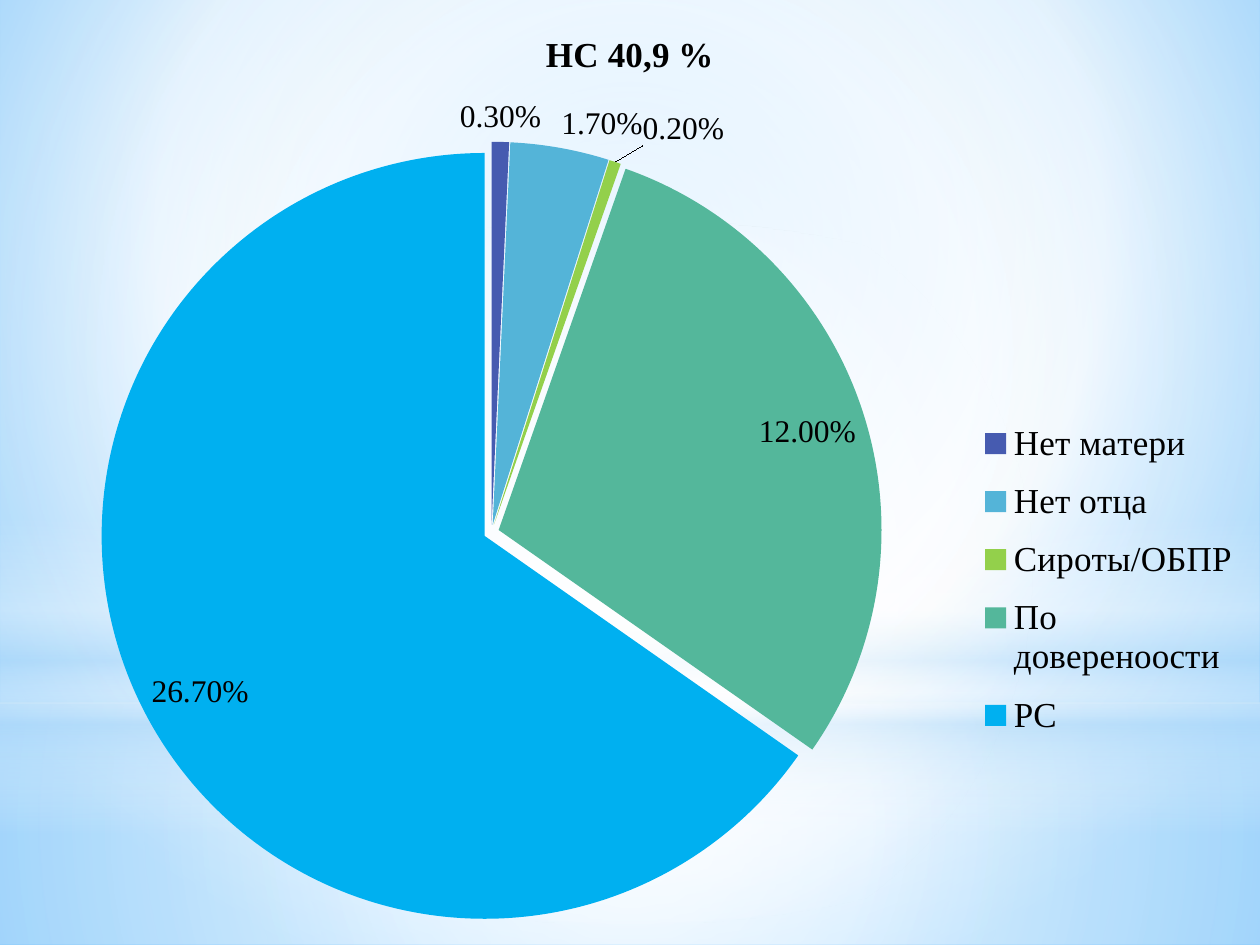
import pptx
import pptx.chart.data
import pptx.dml.color
import pptx.enum.chart
import pptx.enum.shapes
import pptx.oxml
import pptx.oxml.ns
import pptx.util
from pptx.util import Inches

THEME = {
    "font": "Times New Roman",
    "base_font": "Lato",
    "text": "000000",
    "white": "FFFFFF",
    "haze": "B4DCFA",
    "sky": "9ED5FF",
    "edge": "5BB9FF",
    "slices": ["465BB0", "54B4D8", "93D04B", "54B79B", "00B0F0"],
    "label_size": 18,
    "big_size": 20,
}
qn = pptx.oxml.ns.qn
NS = pptx.oxml.ns.nsdecls


def set_gradient(owner, element, stops, to=None, angle=0):
    """Fill with (position, colour, opacity) stops; 'to' makes it radial."""
    owner.fill.gradient()
    grad = next(element.iter(qn("a:gradFill")))
    gs = "".join(
        f'<a:gs pos="{pos * 1000}"><a:srgbClr val="{THEME[color]}">'
        f'<a:alpha val="{alpha * 1000}"/></a:srgbClr></a:gs>'
        for pos, color, alpha in stops)
    if to:
        l, t, r, b = (v * 1000 for v in to)
        shade = (f'<a:path path="circle"><a:fillToRect l="{l}" t="{t}" '
                 f'r="{r}" b="{b}"/></a:path>')
    else:
        shade = f'<a:lin ang="{angle * 60000}" scaled="0"/>'
    new = pptx.oxml.parse_xml(
        f'<a:gradFill {NS("a")} rotWithShape="1"><a:gsLst>{gs}</a:gsLst>{shade}</a:gradFill>')
    grad.getparent().replace(grad, new)


def manual_layout(x, y, w=None, h=None, inner=False, edge=True):
    """Build a c:layout from fractions of the chart size."""
    parts = '<c:layoutTarget val="inner"/>' if inner else ""
    if edge:
        parts += '<c:xMode val="edge"/><c:yMode val="edge"/>'
    for tag, value in (("x", x), ("y", y), ("w", w), ("h", h)):
        if value is not None:
            parts += f'<c:{tag} val="{value}"/>'
    return pptx.oxml.parse_xml(
        f'<c:layout {NS("c")}><c:manualLayout>{parts}</c:manualLayout></c:layout>')


prs = pptx.Presentation()
prs.slide_width, prs.slide_height = Inches(10), Inches(7.5)
s = prs.slides.add_slide(prs.slide_layouts[6])

# Background
set_gradient(s.background, s._element,
             [(0, "sky", 100), (60, "white", 100), (100, "edge", 100)], (20, 10, 20, 60))

# Haze layers: shape, top, height, stops, radial centre
RECT = pptx.enum.shapes.MSO_SHAPE.RECTANGLE
OVAL = pptx.enum.shapes.MSO_SHAPE.OVAL
CENTRE = (50, 50, 50, 50)
layers = [
    (RECT, 5.58, 1.92, [(0, "white", 91), (37, "white", 76), (100, "haze", 79)], CENTRE),
    (RECT, 0, 5.58, [(0, "white", 89), (48, "white", 62), (100, "haze", 79)], CENTRE),
    (RECT, 4.12, 2.5, [(0, "white", 0), (29, "white", 30), (45, "haze", 40),
                       (55, "white", 26), (65, "haze", 60), (100, "white", 0)], None),
    (OVAL, 1.75, 5.58, [(0, "white", 100), (56, "white", 0)], CENTRE),
]
for kind, top, height, stops, to in layers:
    sp = s.shapes.add_shape(kind, 0, Inches(top), Inches(10), Inches(height))
    sp.shadow.inherit = False
    sp.line.fill.background()
    set_gradient(sp, sp._element, stops, to, 90)

# Pie chart
data = pptx.chart.data.CategoryChartData(number_format="0.00%")
data.categories = ["Нет матери", "Нет отца", "Сироты/ОБПР", "По довереноости", "РС"]
data.add_series("Series 1", [0.003, 0.017, 0.002, 0.12, 0.267])
chart = s.shapes.add_chart(pptx.enum.chart.XL_CHART_TYPE.PIE, 0, 0,
                           Inches(10), Inches(7.48), data).chart
chart.font.name = THEME["base_font"]
chart.font.size = pptx.util.Pt(THEME["label_size"])
chart.font.color.rgb = pptx.dml.color.RGBColor.from_string(THEME["text"])
plot = chart.plots[0]
plot.vary_by_categories = True
series = plot.series[0]

# Chart title
chart.has_title = True
chart.chart_title.include_in_layout = False
r = chart.chart_title.text_frame.paragraphs[0].add_run()
r.text = "НС 40,9 %"
r.font.bold = True

# Legend
chart.has_legend = True
chart.legend.position = pptx.enum.chart.XL_LEGEND_POSITION.RIGHT
chart.legend.include_in_layout = False
for font in (r.font, chart.legend.font):
    font.name = THEME["font"]
    font.size = pptx.util.Pt(THEME["big_size"])
    font.color.rgb = pptx.dml.color.RGBColor.from_string(THEME["text"])

# Value labels: small slices outside, large ones inside
labels = series.data_labels
labels.show_value = True
labels.number_format = "0.00%"
labels.number_format_is_linked = False
POSITION = pptx.enum.chart.XL_LABEL_POSITION
for i, color in enumerate(THEME["slices"]):
    point = series.points[i]
    point.format.fill.solid()
    point.format.fill.fore_color.rgb = pptx.dml.color.RGBColor.from_string(color)
    label = point.data_label
    label.position = POSITION.OUTSIDE_END if i < 3 else POSITION.INSIDE_END
    for font in (labels.font, label.font):
        font.name = THEME["font"]
        font.size = pptx.util.Pt(THEME["label_size"])
        font.color.rgb = pptx.dml.color.RGBColor.from_string(THEME["text"])

# Explosion, placement of plot and legend, and the label with a leader line
ser = series._element
explosion = pptx.oxml.parse_xml(f'<c:explosion {NS("c")} val="2"/>')
ser.find(qn("c:dPt")).addprevious(explosion)

area = chart._chartSpace.chart.plotArea
for old in area.findall(qn("c:layout")):
    area.remove(old)
area.insert(0, manual_layout(0.08, 0.15, 0.62, 0.83, inner=True))

legend = chart.legend._element
for old in legend.findall(qn("c:layout")):
    legend.remove(old)
legend.find(qn("c:legendPos")).addnext(manual_layout(0.77, 0.43, 0.22, 0.37))

orphans_label = ser.findall(".//" + qn("c:dLbl"))[2]
orphans_label.find(qn("c:idx")).addnext(manual_layout(0.02, -0.01, edge=False))

prs.save("out.pptx")
